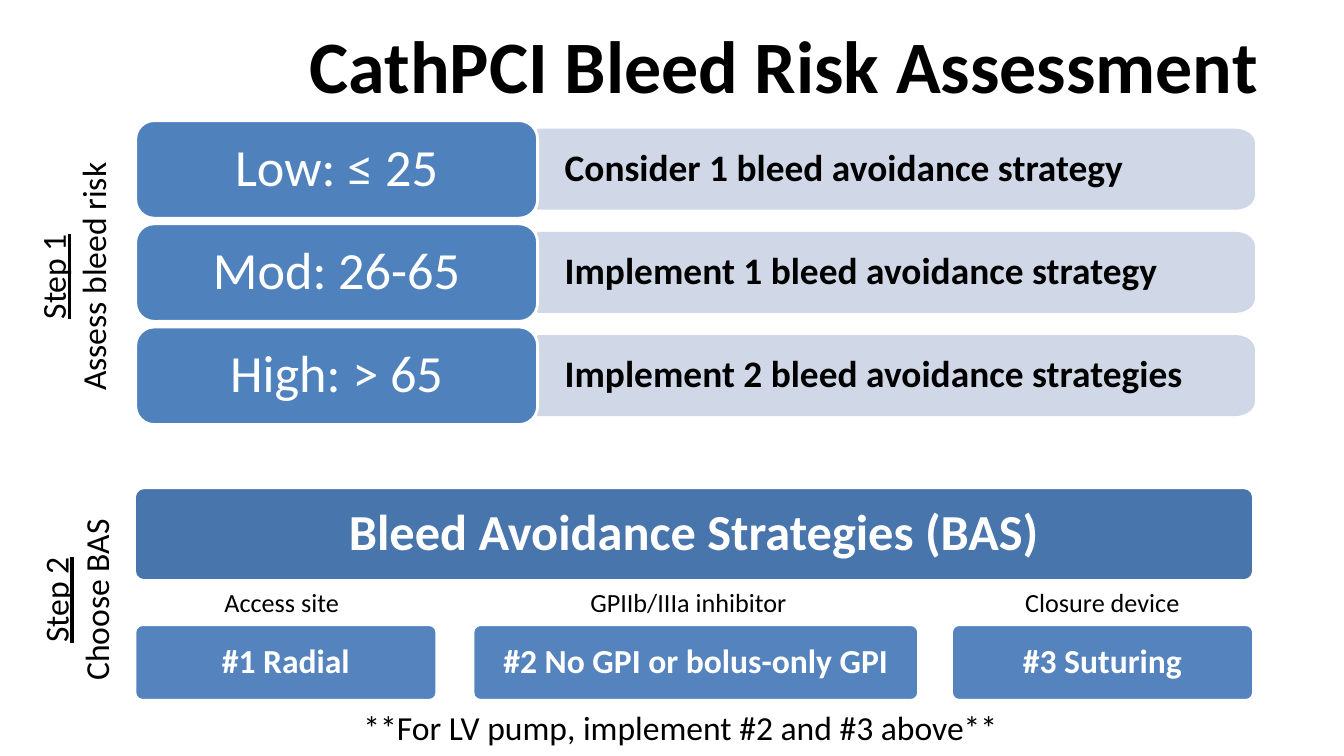
"""Build the bleed risk assessment slide."""
from math import cos, pi, sin

from pptx import Presentation
from pptx.dml.color import RGBColor
from pptx.enum.shapes import MSO_SHAPE
from pptx.enum.text import MSO_ANCHOR, PP_ALIGN
from pptx.util import Cm, Pt

BLACK = RGBColor(0x00, 0x00, 0x00)
WHITE = RGBColor(0xFF, 0xFF, 0xFF)
RISK_BLUE = RGBColor(0x4F, 0x81, 0xBD)
HEADER_BLUE = RGBColor(0x48, 0x75, 0xAC)
STRATEGY_BLUE = RGBColor(0x54, 0x83, 0xBE)
PALE_BLUE = RGBColor(0xD0, 0xD8, 0xE8)

RISKS = [
    ("Low: ≤ 25", "Consider 1 bleed avoidance strategy"),
    ("Mod: 26-65", "Implement 1 bleed avoidance strategy"),
    ("High: > 65", "Implement 2 bleed avoidance strategies"),
]
RISK_PITCH = 2.6
STRATEGIES = [
    ("#1 Radial", 3.4, 7.61, "Access site", 7.1),
    ("#2 No GPI or bolus-only GPI", 11.92, 11.23, "GPIIb/IIIa inhibitor", 17.35),
    ("#3 Suturing", 23.98, 7.61, "Closure device", 27.78),
]
STEPS = [
    ("Step 1", "Assess bleed risk", 0.69, 3.94, 6.07),
    ("Step 2", "Choose BAS", 0.76, 12.95, 4.34),
]


def set_attributes(target, values):
    """Set each named attribute on the target."""
    for name, value in values.items():
        setattr(target, name, value)


def write_paragraph(paragraph, text, size, color=BLACK, align=PP_ALIGN.CENTER, **font_values):
    """Write one formatted run into a paragraph."""
    paragraph.alignment = align
    run = paragraph.add_run()
    run.text = text
    set_attributes(run.font, {"name": "Calibri", "size": Pt(size), **font_values})
    run.font.color.rgb = color


def paint(shape, fill, line):
    """Give a shape a flat fill and a thin outline."""
    shape.shadow.inherit = False
    shape.fill.solid()
    shape.fill.fore_color.rgb = fill
    shape.line.color.rgb = line
    shape.line.width = Pt(2)


def add_card(slide, box, corner, fill, text, size, bold=True):
    """Add a rounded card with centred white text."""
    shape = slide.shapes.add_shape(MSO_SHAPE.ROUNDED_RECTANGLE, *map(Cm, box))
    shape.adjustments[0] = corner
    paint(shape, fill, WHITE)
    set_attributes(shape.text_frame, {
        "word_wrap": True, "vertical_anchor": MSO_ANCHOR.MIDDLE,
        "margin_left": Cm(0.3), "margin_right": Cm(0.3),
    })
    paragraph = shape.text_frame.paragraphs[0]
    paragraph.line_spacing = 0.9
    write_paragraph(paragraph, text, size, WHITE, bold=bold)


def add_advice_panel(slide, top, text):
    """Add a pale panel rounded on its right side."""
    left, width, height, radius_x, radius_y = 13.56, 18.03, 1.97, 0.46, 0.33
    right, bottom = left + width, top + height
    angles = [step * pi / 16 for step in range(9)]
    upper = [(right - radius_x * (1 - sin(a)), top + radius_y * (1 - cos(a))) for a in angles]
    lower = [(x, top + bottom - y) for x, y in reversed(upper)]
    points = [(Cm(x), Cm(y)) for x, y in upper + lower + [(left, bottom)]]
    builder = slide.shapes.build_freeform(Cm(left), Cm(top))
    builder.add_line_segments(points, close=True)
    shape = builder.convert_to_shape()
    paint(shape, PALE_BLUE, PALE_BLUE)
    set_attributes(shape.text_frame, {
        "word_wrap": True, "vertical_anchor": MSO_ANCHOR.MIDDLE,
        "margin_left": Cm(0.67), "margin_right": Cm(0.33),
    })
    paragraph = shape.text_frame.paragraphs[0]
    paragraph.line_spacing = 0.9
    write_paragraph(paragraph, text, 26.7, align=PP_ALIGN.LEFT, bold=True)


def add_label(slide, box, text, size):
    """Add a centred one-line text box."""
    text_frame = slide.shapes.add_textbox(*map(Cm, box)).text_frame
    text_frame.word_wrap = True
    write_paragraph(text_frame.paragraphs[0], text, size)


def add_step(slide, step, task, left, top, height):
    """Add a step caption that reads upwards."""
    shape = slide.shapes.add_textbox(Cm(left), Cm(top), Cm(2.57), Cm(height))
    text_frame = shape.text_frame
    text_frame.word_wrap = False
    shape.element.txBody.bodyPr.set("vert", "vert270")
    write_paragraph(text_frame.paragraphs[0], step, 24, underline=True)
    write_paragraph(text_frame.add_paragraph(), task, 24)


def add_title(slide, text):
    """Place and format the title placeholder."""
    title = slide.shapes.title
    set_attributes(title, {
        "left": Cm(6.78), "top": Cm(0.2), "width": Cm(25.96), "height": Cm(2.82),
    })
    title.text_frame.vertical_anchor = MSO_ANCHOR.MIDDLE
    write_paragraph(title.text_frame.paragraphs[0], text, 52.8, bold=True)


def main():
    """Build and save the slide."""
    presentation = Presentation()
    presentation.slide_width, presentation.slide_height = Cm(33.87), Cm(19.05)
    slide = presentation.slides.add_slide(presentation.slide_layouts[5])
    add_title(slide, "CathPCI Bleed Risk Assessment")
    add_card(slide, (3.39, 12.29, 28.2, 2.34), 0.1, HEADER_BLUE,
             "Bleed Avoidance Strategies (BAS)", 36)
    for strategy, left, width, label, center in STRATEGIES:
        add_card(slide, (left, 15.74, width, 1.91), 0.1, STRATEGY_BLUE, strategy, 24)
        add_label(slide, (center - 3, 14.65, 6, 1.07), label, 18.7)
    for step in STEPS:
        add_step(slide, *step)
    add_label(slide, (7.15, 17.7, 20, 1.27),
              "**For LV pump, implement #2 and #3 above**", 24)
    for row, (risk, advice) in enumerate(RISKS):
        offset = row * RISK_PITCH
        add_advice_panel(slide, 3.28 + offset, advice)
        add_card(slide, (3.42, 3.04 + offset, 10.13, 2.46), 0.19, RISK_BLUE,
                 risk, 37.3, bold=False)
    presentation.save("out.pptx")


if __name__ == "__main__":
    main()
